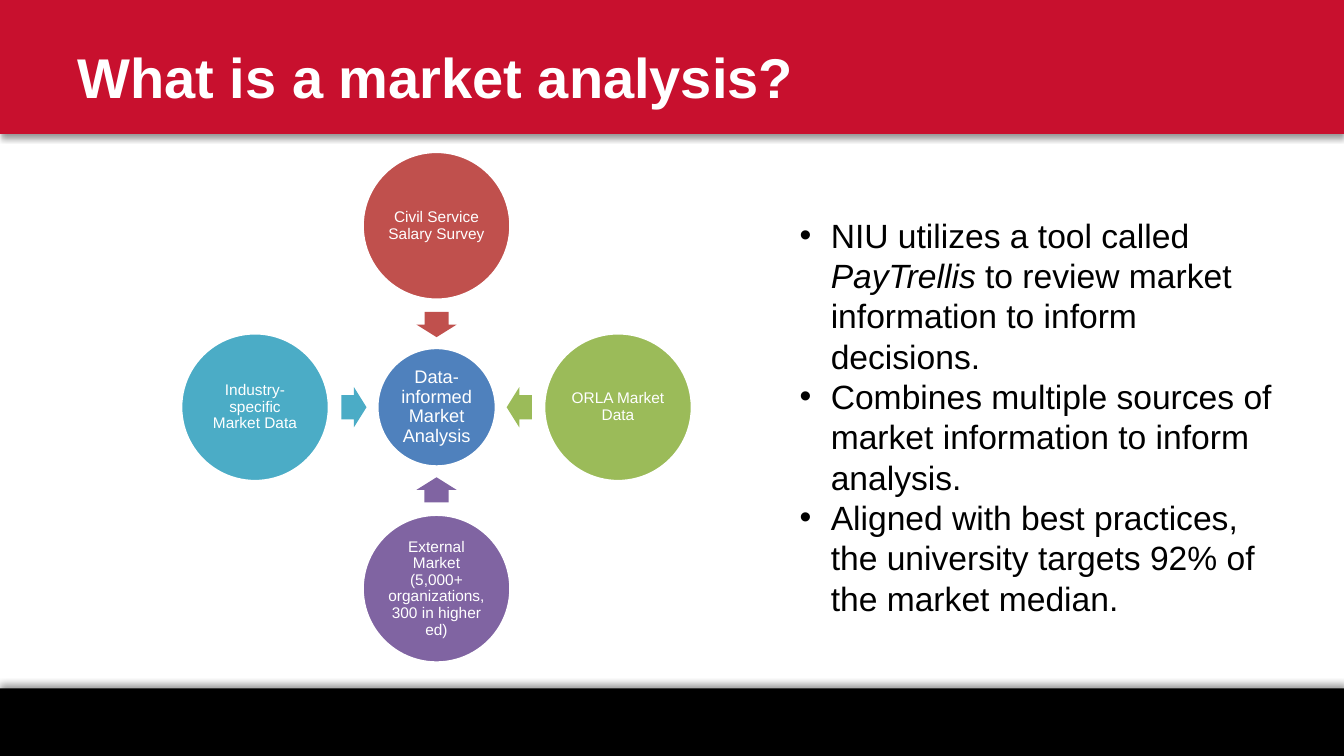
from lxml import etree
from pptx import Presentation
from pptx.dml.color import RGBColor
from pptx.enum.shapes import MSO_SHAPE
from pptx.enum.text import MSO_ANCHOR, MSO_AUTO_SIZE, PP_ALIGN
from pptx.oxml.ns import qn
from pptx.util import Inches, Pt

RECT, CIRCLE, ARROW = MSO_SHAPE.RECTANGLE, MSO_SHAPE.OVAL, MSO_SHAPE.RIGHT_ARROW
MIDDLE, TOP = MSO_ANCHOR.MIDDLE, MSO_ANCHOR.TOP
CENTER, LEFT = PP_ALIGN.CENTER, PP_ALIGN.LEFT
NO_FIT, GROW = MSO_AUTO_SIZE.NONE, MSO_AUTO_SIZE.SHAPE_TO_FIT_TEXT


def rgb(value):
    return RGBColor.from_string(value)


class MarketSlide:
    FONT = "Arial"
    RED, BLACK, WHITE = "C8102E", "000000", "FFFFFF"

    def __init__(self, prs):
        self.slide = prs.slides.add_slide(prs.slide_layouts[1])

    def set_font(self, paragraph, size, color, bold=False):
        font = paragraph.font
        font.name, font.size, font.bold = self.FONT, Pt(size), bold
        font.color.rgb = rgb(color)

    def add_shape(self, kind, left, top, width, height, color):
        shape = self.slide.shapes.add_shape(
            kind, Inches(left), Inches(top), Inches(width), Inches(height))
        shape.shadow.inherit = False
        shape.fill.solid()
        shape.fill.fore_color.rgb = rgb(color)
        shape.line.fill.background()
        return shape

    def add_band(self, top, height, color, shadow_angle):
        band = self.add_shape(RECT, 0, top, 13.33, height, color)
        effects = band.element.spPr.find(qn("a:effectLst"))
        shadow = etree.SubElement(
            effects, qn("a:outerShdw"), blurRad=str(Pt(4)), dist=str(Pt(3)),
            dir=str(shadow_angle * 60000), algn="t", rotWithShape="0")
        tint = etree.SubElement(shadow, qn("a:srgbClr"), val=self.BLACK)
        etree.SubElement(tint, qn("a:alpha"), val="40000")

    def add_circle(self, x, y, diameter, color, label, size):
        circle = self.add_shape(
            CIRCLE, x - diameter / 2, y - diameter / 2, diameter, diameter, color)
        circle.line.color.rgb = rgb(self.WHITE)
        circle.line.width = Pt(2)
        frame = circle.text_frame
        frame.word_wrap = True
        frame.vertical_anchor = MIDDLE
        frame.margin_left = frame.margin_right = Inches(0.02)
        frame.margin_top = frame.margin_bottom = Inches(0.02)
        frame.text = label
        paragraph = frame.paragraphs[0]
        paragraph.alignment = CENTER
        paragraph.line_spacing = 0.9
        self.set_font(paragraph, size, self.WHITE)

    def add_arrow(self, x, y, rotation, color):
        length, breadth = 0.25, 0.4
        arrow = self.add_shape(
            ARROW, x - length / 2, y - breadth / 2, length, breadth, color)
        arrow.adjustments[0], arrow.adjustments[1] = 0.6, 0.5
        arrow.rotation = rotation

    def place(self, holder, left, top, width, height, anchor, fit):
        holder.left, holder.top = Inches(left), Inches(top)
        holder.width, holder.height = Inches(width), Inches(height)
        frame = holder.text_frame
        frame.word_wrap = True
        frame.vertical_anchor = anchor
        frame.auto_size = fit
        # Bring the text in front of the bands
        holder.element.getparent().append(holder.element)
        return frame

    def set_title(self, text):
        frame = self.place(
            self.slide.shapes.title, 0.67, 0.17, 11, 1.17, MIDDLE, NO_FIT)
        frame.text = text
        heading = frame.paragraphs[0]
        heading.alignment = LEFT
        self.set_font(heading, 40, self.WHITE, bold=True)

    def set_bullets(self, points):
        frame = self.place(
            self.slide.placeholders[1], 7.83, 2.08, 5, 4.14, TOP, GROW)
        for index, point in enumerate(points):
            paragraph = frame.paragraphs[0] if index == 0 else frame.add_paragraph()
            properties = paragraph._p.get_or_add_pPr()
            properties.set("marL", str(Inches(0.31)))
            properties.set("indent", str(-Inches(0.31)))
            etree.SubElement(properties, qn("a:buFont"), typeface=self.FONT)
            etree.SubElement(properties, qn("a:buChar"), char="•")
            paragraph.space_before = Pt(0)
            self.set_font(paragraph, 24, self.BLACK)
            for text, italic in point:
                run = paragraph.add_run()
                run.text = text
                if italic:
                    run.font.italic = True


def main():
    prs = Presentation()
    prs.slide_width, prs.slide_height = Inches(13.33), Inches(7.5)
    page = MarketSlide(prs)

    # Header and footer bands
    page.add_band(6.83, 0.67, page.BLACK, 270)
    page.add_band(0, 1.33, page.RED, 90)

    # Hub with four sources pointing at it
    hub_x, hub_y = 4.33, 4.04
    source_radius, arrow_radius = 1.8, 0.82
    page.add_circle(hub_x, hub_y, 1.18, "4F81BD", "Data-informed Market Analysis", 13)
    sources = [
        (0, -1, 90, "C0504D", "Civil Service Salary Survey"),
        (1, 0, 180, "9BBB59", "ORLA Market Data"),
        (0, 1, 270, "8064A2",
         "External Market (5,000+ organizations, 300 in higher ed)"),
        (-1, 0, 0, "4BACC6", "Industry-specific Market Data"),
    ]
    for dx, dy, rotation, color, label in sources:
        page.add_arrow(hub_x + dx * arrow_radius, hub_y + dy * arrow_radius,
                       rotation, color)
        page.add_circle(hub_x + dx * source_radius, hub_y + dy * source_radius,
                        1.47, color, label, 11)

    # Title and key points
    page.set_title("What is a market analysis?")
    page.set_bullets([
        [("NIU utilizes a tool called ", False), ("PayTrellis", True),
         (" to review market information to inform decisions.", False)],
        [("Combines multiple sources of market information to inform analysis.",
          False)],
        [("Aligned with best practices, the university targets 92% of the "
          "market median.", False)],
    ])

    prs.save("out.pptx")


if __name__ == "__main__":
    main()
